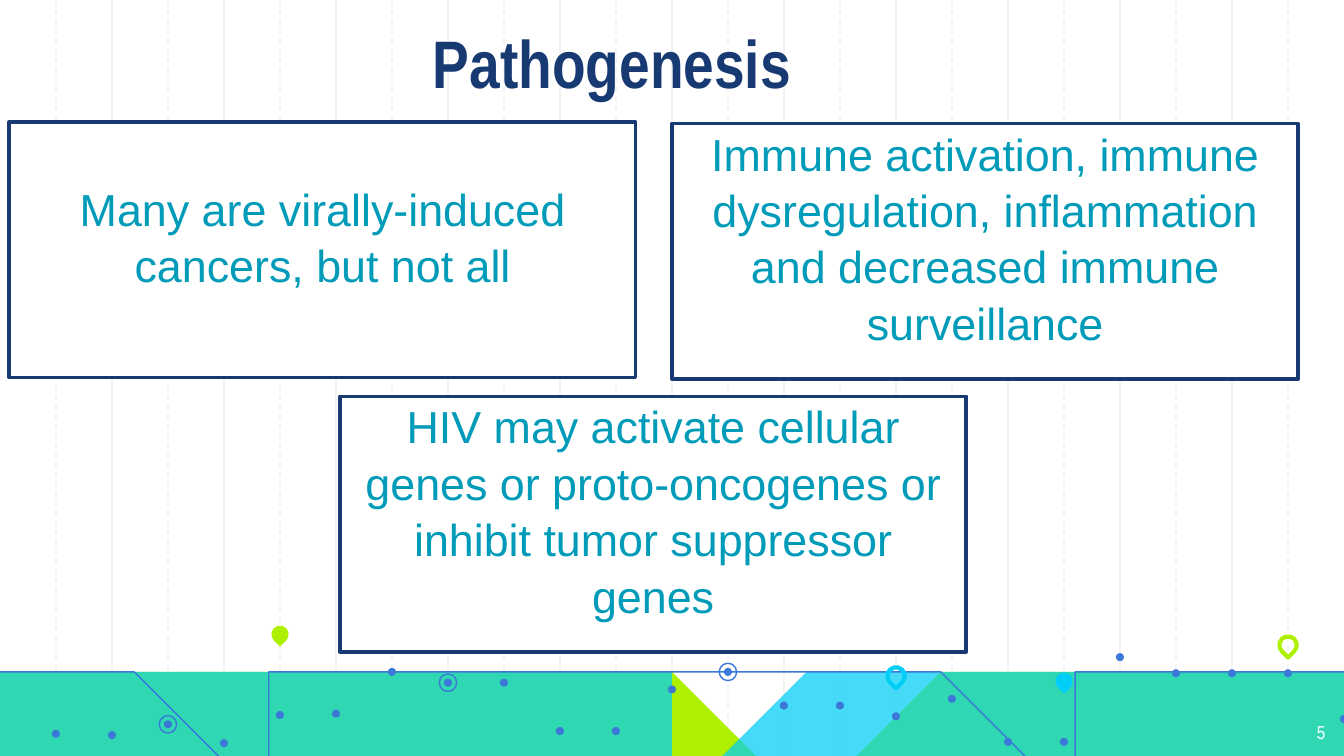
from dataclasses import dataclass
from typing import Optional

import lxml.etree
import pptx
import pptx.dml.color
import pptx.enum.dml
import pptx.enum.shapes
import pptx.enum.text
import pptx.oxml.ns
import pptx.util

Inches, Pt = pptx.util.Inches, pptx.util.Pt
RGBColor = pptx.dml.color.RGBColor
Shape = pptx.enum.shapes.MSO_SHAPE
Align = pptx.enum.text.PP_ALIGN
Anchor = pptx.enum.text.MSO_ANCHOR
qn = pptx.oxml.ns.qn

WIDTH = 10
HEIGHT = WIDTH * 9 / 16
COLUMN = WIDTH / 24

NAVY = RGBColor(0x17, 0x3A, 0x73)
TEAL = RGBColor(0x00, 0x9B, 0xB8)
LIME = RGBColor(0xAF, 0xF0, 0x00)
CYAN = RGBColor(0x00, 0xCE, 0xF6)
BLUE = RGBColor(0x3C, 0x78, 0xD8)
GRAY = RGBColor(0xF3, 0xF3, 0xF3)
WHITE = RGBColor(0xFF, 0xFF, 0xFF)

DOT, RING = 0.06, 0.13


@dataclass
class Pin:
    column: int
    middle: float
    color: RGBColor
    filled: bool


@dataclass
class Card:
    left: float
    top: float
    text: str


# Heights by grid column; a column left out lies on a straight stretch
LIME_AREA = {
    0: 4.87, 1: 5.17, 2: 5, 4: 5, 5: 4.86, 6: 5.23, 7: 5.44, 8: 5.44, 9: 5.15,
    10: 5.08, 11: 4.93, 12: 5.27, 13: 5.28, 14: 5.55, 15: 5.55, 16: 5.41,
    17: 5.41, 18: 5.18, 19: 5.32, 20: 5.09, 22: 5.08, 23: 5.17, 24: 4.94,
}
CYAN_AREA = {
    0: 5.16, 1: 5.31, 3: 5.31, 4: 5.19, 5: 5.45, 6: 5.45, 7: 5.31, 8: 5.23,
    9: 5.23, 10: 5.3, 11: 5.21, 12: 5.35, 13: 5.57, 14: 5.42, 15: 5.42,
    16: 5.17, 17: 5.31, 18: 5.31, 19: 5.19, 21: 5.19, 22: 5.44, 23: 5.35,
    24: 5.01,
}
TREND = [
    5.06, 5.46, 5.47, 5.39, 5.53, 5.32, 5.31, 5, 5.08, 5.08, 5.44, 5.44, 5.13,
    5, 5.25, 5.25, 5.33, 5.2, 5.52, 5.52, 4.89, 5.01, 5.01, 5.01, 5.35,
]
RINGED_COLUMNS = (3, 8, 13)
PINS = [
    Pin(5, 4.72, LIME, True),
    Pin(16, 5.03, CYAN, False),
    Pin(19, 5.07, CYAN, True),
    Pin(23, 4.8, LIME, False),
]
CARDS = [
    Card(0.07, 0.91, "Many are virally-induced cancers, but not all"),
    Card(5, 0.92, "Immune activation, immune dysregulation, inflammation "
                  "and decreased immune surveillance"),
    Card(2.53, 2.95, "HIV may activate cellular genes or proto-oncogenes or "
                     "inhibit tumor suppressor genes"),
]


def paint(shape, fill: Optional[RGBColor] = None,
          line: Optional[RGBColor] = None, weight: float = 0.75) -> None:
    shape.shadow.inherit = False
    if fill is None:
        shape.fill.background()
    else:
        shape.fill.solid()
        shape.fill.fore_color.rgb = fill
    if line is None:
        shape.line.fill.background()
    else:
        shape.line.color.rgb = line
        shape.line.width = Pt(weight)


def draw_grid_line(page, column: int) -> None:
    x = Inches(column * COLUMN)
    rule = page.shapes.add_connector(
        pptx.enum.shapes.MSO_CONNECTOR.STRAIGHT, x, 0, x, Inches(HEIGHT))
    rule.line.color.rgb = GRAY
    rule.line.width = Pt(0.75)
    if column % 2:
        rule.line.dash_style = pptx.enum.dml.MSO_LINE.DASH
    lxml.etree.SubElement(rule.element.spPr, qn("a:effectLst"))


def draw_path(page, points: list[tuple[float, float]], closed: bool):
    builder = page.shapes.build_freeform(*points[0], scale=Inches(1))
    builder.add_line_segments(points[1:], close=closed)
    return builder.convert_to_shape()


def draw_area(page, heights: dict[int, float], color: RGBColor):
    crest = [(column * COLUMN, y) for column, y in heights.items()]
    area = draw_path(page, crest + [(WIDTH, HEIGHT), (0, HEIGHT)], True)
    paint(area, fill=color)
    return area


def draw_mark(page, kind: Shape, column: int, middle: float, size: float):
    return page.shapes.add_shape(
        kind, Inches(column * COLUMN - size / 2), Inches(middle - size / 2),
        Inches(size), Inches(size))


def draw_pin(page, pin: Pin) -> None:
    drop = draw_mark(page, Shape.TEAR, pin.column, pin.middle, RING)
    drop.rotation = 135
    if pin.filled:
        paint(drop, fill=pin.color)
    else:
        paint(drop, line=pin.color, weight=2.25)


def write(box, text: str, size: float, font: str, color: RGBColor,
          align: Align, bold: bool = False) -> None:
    frame = box.text_frame
    frame.word_wrap = True
    frame.text = text
    para = frame.paragraphs[0]
    para.alignment = align
    span = para.runs[0]
    span.font.size, span.font.name, span.font.bold = Pt(size), font, bold
    span.font.color.rgb = color


def draw_card(page, card: Card) -> None:
    box = page.shapes.add_shape(
        Shape.RECTANGLE, Inches(card.left), Inches(card.top),
        Inches(4.66), Inches(1.9))
    paint(box, fill=WHITE, line=NAVY, weight=2)
    write(box, card.text, 24, "Arial", TEAL, Align.CENTER)
    frame = box.text_frame
    frame.vertical_anchor = Anchor.MIDDLE
    frame.margin_top, frame.margin_bottom = 0, Inches(0.22)
    frame.paragraphs[0].line_spacing = 1.05


def set_margins(box, margin: float) -> None:
    frame = box.text_frame
    frame.margin_left = frame.margin_right = Inches(margin)
    frame.margin_top = frame.margin_bottom = Inches(margin)


def main() -> None:
    deck = pptx.Presentation()
    deck.slide_width, deck.slide_height = Inches(WIDTH), Inches(HEIGHT)
    page = deck.slides.add_slide(deck.slide_layouts[5])

    # Background grid: solid on even columns, dashed on odd ones
    for column in [*range(2, 24, 2), *range(1, 24, 2)]:
        draw_grid_line(page, column)

    # Area chart decoration
    draw_area(page, LIME_AREA, LIME)
    overlay = draw_area(page, CYAN_AREA, CYAN)
    tint = overlay.element.spPr.find(qn("a:solidFill")).find(qn("a:srgbClr"))
    lxml.etree.SubElement(tint, qn("a:alpha")).set("val", "73000")

    # Trend line with dots, rings and pins
    trend = [(column * COLUMN, y) for column, y in enumerate(TREND)]
    paint(draw_path(page, trend, False), line=BLUE)
    for column, y in enumerate(TREND[1:], start=1):
        paint(draw_mark(page, Shape.OVAL, column, y, DOT), fill=BLUE)
    for column in RINGED_COLUMNS:
        paint(draw_mark(page, Shape.OVAL, column, TREND[column], RING), line=BLUE)
    for pin in PINS:
        draw_pin(page, pin)

    # Title, brought in front of the background
    title = page.shapes.title
    title.element.getparent().append(title.element)
    title.left, title.top = Inches(0.73), Inches(0.08)
    title.width, title.height = Inches(7.65), Inches(0.78)
    write(title, "Pathogenesis", 36, "Arial Narrow", NAVY, Align.CENTER, True)
    title.text_frame.auto_size = pptx.enum.text.MSO_AUTO_SIZE.NONE
    title.text_frame.vertical_anchor = Anchor.BOTTOM
    set_margins(title, 0.1)

    # Page number
    number = page.shapes.add_textbox(
        Inches(9.36), Inches(5.28), Inches(0.6), Inches(0.35))
    write(number, "5", 10, "Arial Narrow", WHITE, Align.RIGHT)
    set_margins(number, 0.1)

    # Statement cards
    for card in CARDS:
        draw_card(page, card)

    deck.save("out.pptx")


if __name__ == "__main__":
    main()
